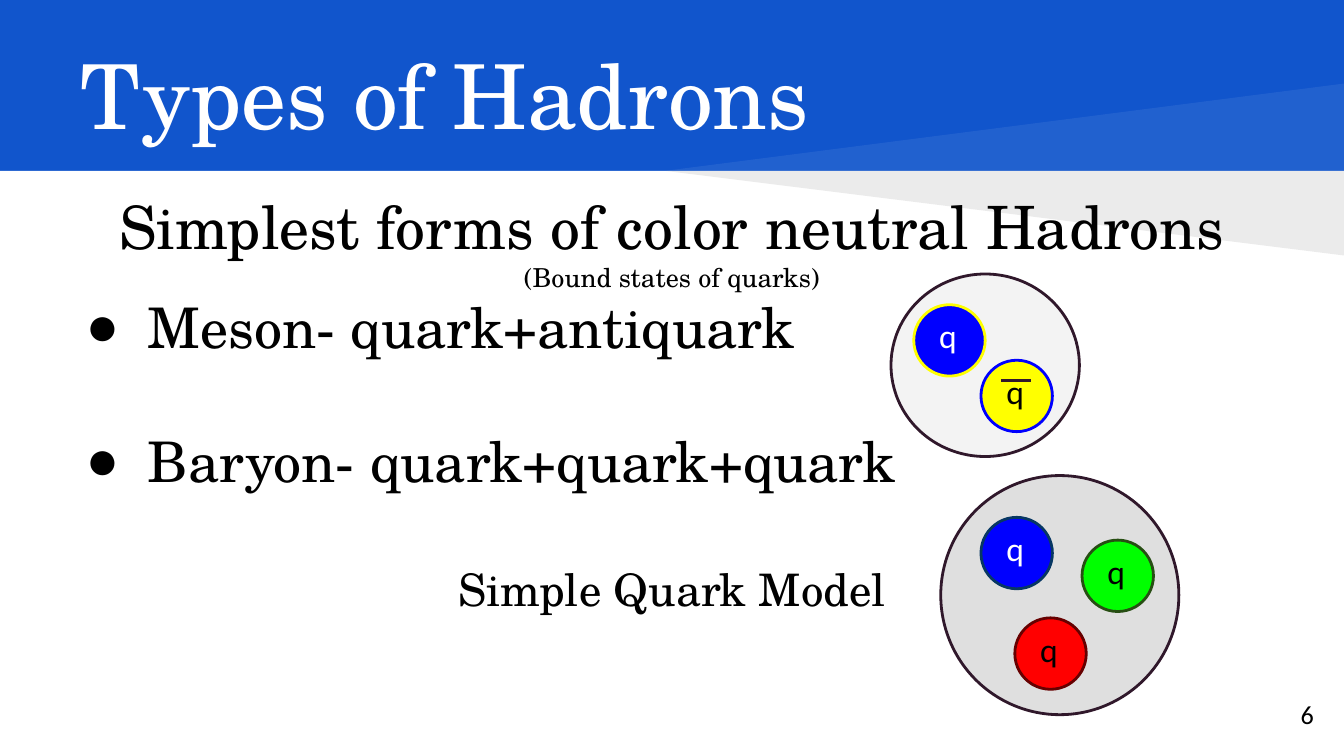
from lxml import etree
from pptx import Presentation, util as u
from pptx.dml.color import RGBColor
from pptx.enum import shapes, text
from pptx.oxml.ns import qn

WIDE, HIGH, BAND = 25.4, 14.29, 3.23
SERIF, SANS = "TeX Gyre Schola", "Calibri"
BLACK, WHITE, PLUM = "000000", "FFFFFF", "30182B"
BLUE, YELLOW, GREEN, RED = "0000FF", "FFFF00", "00FF00", "FF0000"
OVAL = shapes.MSO_SHAPE.OVAL
NODE = shapes.MSO_SHAPE.FLOWCHART_CONNECTOR
MID = text.PP_ALIGN.CENTER


def hue(code):
    return RGBColor.from_string(code)


def cms(*nums):
    return [u.Cm(n) for n in nums]


def place(shape, x, y, w, h):
    shape.left, shape.top, shape.width, shape.height = cms(x, y, w, h)


def paint(shape, fill, line=None, alpha=None):
    shape.shadow.inherit = False
    shape.fill.solid()
    shape.fill.fore_color.rgb = hue(fill)
    if alpha:
        tint = shape.element.spPr.find(".//" + qn("a:srgbClr"))
        etree.SubElement(tint, qn("a:alpha"), val=str(alpha * 1000))
    if line:
        shape.line.color.rgb = hue(line)
        shape.line.width = u.Pt(1.5)
    else:
        shape.line.fill.background()


def setup(frame, anchor=text.MSO_ANCHOR.TOP):
    frame.word_wrap = True
    frame.auto_size = text.MSO_AUTO_SIZE.NONE
    frame.vertical_anchor = anchor
    frame.margin_left = frame.margin_right = u.Cm(0.25)
    frame.margin_top = frame.margin_bottom = u.Cm(0.25)


def write(para, words, size=18, font=SANS, color=BLACK, align=text.PP_ALIGN.LEFT, gap=0):
    para.alignment = align
    para.space_before, para.space_after = u.Pt(gap), u.Pt(0)
    para.line_spacing = 1.0
    run = para.add_run()
    run.text = words
    run.font.size, run.font.name = u.Pt(size), font
    run.font.color.rgb = hue(color)


def label(slide, x, y, w, h, words, **style):
    box = slide.shapes.add_textbox(*cms(x, y, w, h))
    setup(box.text_frame)
    write(box.text_frame.paragraphs[0], words, **style)


def bullet(para, mark):
    props = para._p.get_or_add_pPr()
    left, hang = (1.27, -1.17) if mark else (0, 0)
    props.set("marL", str(u.Cm(left)))
    props.set("indent", str(u.Cm(hang)))
    if mark:
        tint = etree.SubElement(props, qn("a:buClr"))
        etree.SubElement(tint, qn("a:srgbClr"), val=BLACK)
        etree.SubElement(props, qn("a:buChar"), char=mark)
    else:
        etree.SubElement(props, qn("a:buNone"))


def ray(slide, x, y, w, rise, fill, alpha):
    pen = slide.shapes.build_freeform(*cms(x, y))
    pen.add_line_segments([cms(x + w, y + rise), cms(x + w, y)], close=True)
    paint(pen.convert_to_shape(), fill, alpha=alpha)


def backdrop(slide, x, y, w, h):
    slide.background.fill.solid()
    slide.background.fill.fore_color.rgb = hue("1155CC")
    panel = slide.shapes.add_shape(shapes.MSO_SHAPE.RECTANGLE, *cms(x, y, w, h))
    paint(panel, WHITE)
    start = 12.57
    for rise, fill, alpha in ((-1.65, WHITE, 7), (1.6, BLACK, 8)):
        ray(slide, x + start, y, w - start, rise, fill, alpha)


def heading(slide, x, y, w, h):
    title = slide.shapes.title
    place(title, x, y, w, h)
    setup(title.text_frame, text.MSO_ANCHOR.MIDDLE)
    write(title.text_frame.paragraphs[0], "Types of Hadrons", size=48, font=SERIF, color=WHITE)
    slide.shapes.element.append(title.element)


def content(slide, x, y, w, h):
    body = slide.placeholders[1]
    place(body, x, y, w, h)
    frame = body.text_frame
    setup(frame)
    rows = (
        ("Simplest forms of color neutral Hadrons", 32, None, 0),
        ("(Bound states of quarks)", 14, None, 0),
        ("Meson- quark+antiquark", 30, "●", 0),
        ("Baryon- quark+quark+quark", 30, "●", 36),
        ("Simple Quark Model", 24, None, 36),
    )
    for i, (words, size, mark, gap) in enumerate(rows):
        para = frame.add_paragraph() if i else frame.paragraphs[0]
        bullet(para, mark)
        align = text.PP_ALIGN.LEFT if mark else MID
        write(para, words, size=size, font=SERIF, align=align, gap=gap)
    slide.shapes.element.append(body.element)


def overbar(slide, x, y, w):
    bar = slide.shapes.add_connector(shapes.MSO_CONNECTOR.STRAIGHT, *cms(x, y, x + w, y))
    bar.line.color.rgb = hue(PLUM)
    bar.line.width = u.Pt(1.5)
    etree.SubElement(bar.element.spPr, qn("a:effectLst"))


def hadron(slide, x, y, w, h, fill, quarks):
    paint(slide.shapes.add_shape(NODE, *cms(x, y, w, h)), fill, PLUM)
    for dx, dy, color, edge, ink, anti in quarks:
        left, top = x + dx, y + dy
        paint(slide.shapes.add_shape(OVAL, *cms(left, top, 1.35, 1.35)), color, edge)
        label(slide, left + 0.23, top - 0.05, 1.25, 1.35, "q", color=ink)
        if anti:
            overbar(slide, left + 0.38, top + 0.38, 0.56)


def main():
    deck = Presentation()
    deck.slide_width, deck.slide_height = cms(WIDE, HIGH)
    slide = deck.slides.add_slide(deck.slide_layouts[1])
    backdrop(slide, 0, BAND, WIDE, HIGH - BAND)
    heading(slide, 1.27, 0.58, 22.86, 2.39)
    content(slide, 1.27, 3.33, 22.86, 10.34)
    hadron(slide, 16.84, 5.18, 3.56, 3.45, "F3F3F3", (
        (0.43, 0.58, BLUE, YELLOW, WHITE, False),
        (1.7, 1.63, YELLOW, BLUE, BLACK, True),
    ))
    hadron(slide, 17.78, 8.99, 4.5, 4.52, "DFDFDF", (
        (0.76, 0.79, BLUE, "073763", WHITE, False),
        (2.67, 1.22, GREEN, "274E13", BLACK, False),
        (1.4, 2.69, RED, "660000", BLACK, False),
    ))
    label(slide, 24.33, 12.95, 1.07, 1.27, "6", size=14)
    deck.save("out.pptx")


if __name__ == "__main__":
    main()
